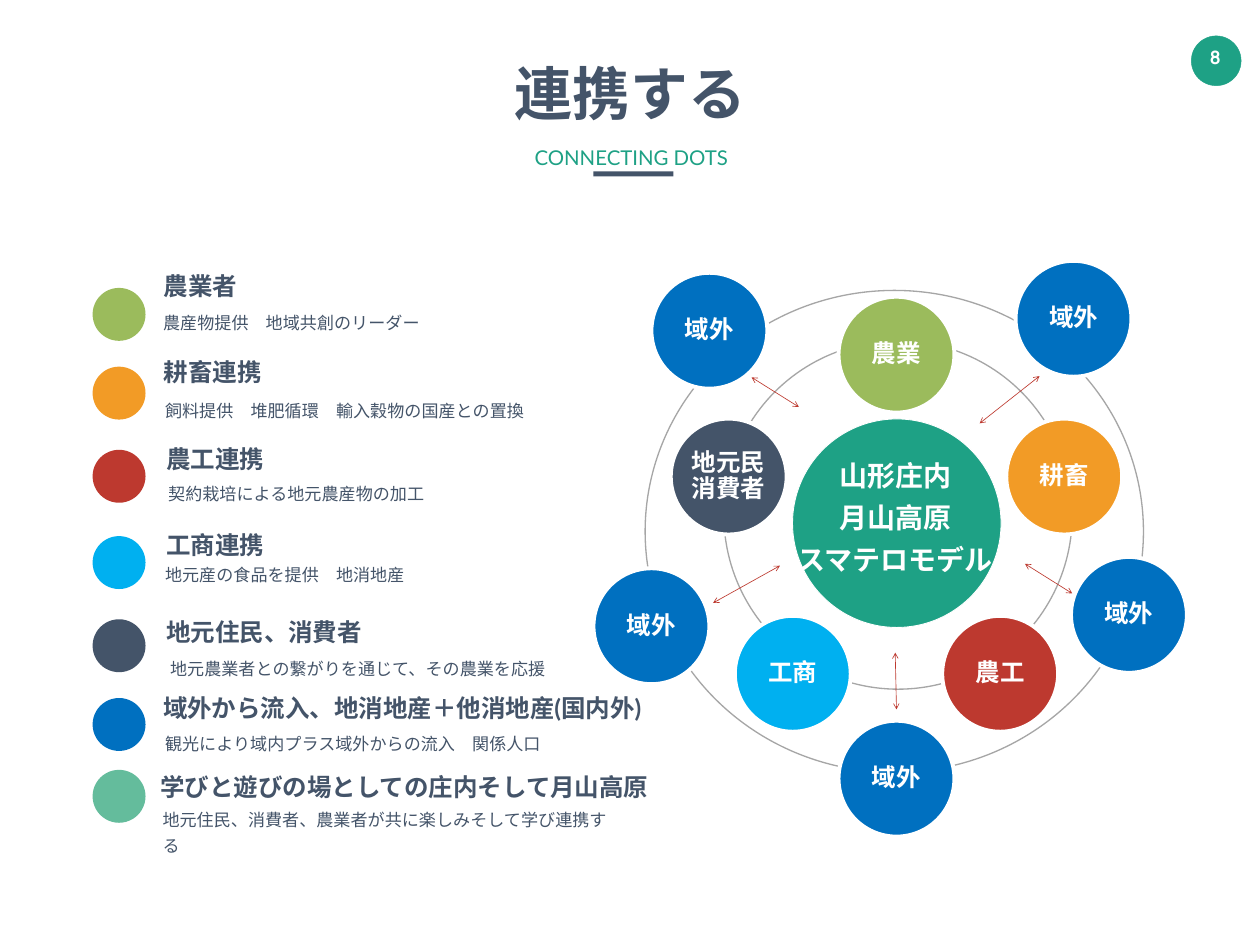
from math import cos, radians, sin

from lxml import etree
from pptx import Presentation
from pptx.dml.color import RGBColor
from pptx.enum.shapes import MSO_CONNECTOR, MSO_SHAPE
from pptx.enum.text import MSO_ANCHOR, PP_ALIGN
from pptx.oxml.ns import qn
from pptx.util import Inches, Pt

OVAL, RECT = MSO_SHAPE.OVAL, MSO_SHAPE.RECTANGLE
STRAIGHT = MSO_CONNECTOR.STRAIGHT
TOP, MIDDLE = MSO_ANCHOR.TOP, MSO_ANCHOR.MIDDLE
LEFT, CENTER = PP_ALIGN.LEFT, PP_ALIGN.CENTER

COLORS = {
    "teal": "1EA185", "mint": "64BC9C", "slate": "445469", "green": "9BBB5C",
    "orange": "F29B26", "red": "BD392F", "sky": "00B0F0", "blue": "0070C0",
    "grey": "A6A6A6", "white": "FFFFFF",
}
RGB = {name: RGBColor.from_string(value) for name, value in COLORS.items()}

# The slide is a grid of 20 columns by 15 rows, one inch each.
COLS, ROWS = 20, 15
prs = Presentation()
prs.slide_width, prs.slide_height = Inches(COLS), Inches(ROWS)
slide = prs.slides.add_slide(prs.slide_layouts[6])


def add_shape(kind, box, fill=None, line=None, width=1):
    s = slide.shapes.add_shape(kind, *map(Inches, box))
    s.shadow.inherit = False
    if fill:
        s.fill.solid()
        s.fill.fore_color.rgb = RGB[fill]
    else:
        s.fill.background()
    if line:
        s.line.color.rgb = RGB[line]
        s.line.width = Pt(width)
    else:
        s.line.fill.background()
    return s


def write(s, text, size, color, bold=True, align=LEFT, anchor=TOP, wrap=True,
          margins=(0.1, 0.05), spacing=None, after=0, font="Lato"):
    """Fill a shape with text; margins are (side, top and bottom) in inches."""
    tf = s.text_frame
    tf.word_wrap, tf.vertical_anchor = wrap, anchor
    tf.margin_left = tf.margin_right = Inches(margins[0])
    tf.margin_top = tf.margin_bottom = Inches(margins[1])
    tf.text = text
    for p in tf.paragraphs:
        p.alignment = align
        p.line_spacing = spacing
        p.space_after = Pt(after)
        for r in p.runs:
            r.font.name, r.font.size, r.font.bold = font, Pt(size), bold
            r.font.color.rgb = RGB[color]


# Page number and heading
add_shape(OVAL, (18.91, 0.57, 0.79, 0.79), "teal", "teal", 0.5)
number = slide.shapes.add_textbox(*map(Inches, (18.96, 0.66, 0.66, 0.51)))
write(number, "8", 21, "white", align=CENTER, wrap=False,
      margins=(0.15, 0.07), font="Manrope")
title = slide.shapes.add_textbox(*map(Inches, (8.07, 0.88, 3.87, 1.19)))
write(title, "連携する", 66, "slate", align=CENTER, wrap=False,
      margins=(0.08, 0.04))
add_shape(RECT, (9.42, 2.72, 1.27, 0.08), "slate")
subtitle = slide.shapes.add_textbox(*map(Inches, (8.29, 2.14, 3.46, 0.6)))
write(subtitle, "CONNECTING DOTS", 23.3, "teal", bold=False, align=CENTER,
      wrap=False, margins=(0.18, 0.09), spacing=1.2)

# Legend: dot colour and top, heading and its corner, detail and its corner
LEGEND = [
    ("green", 4.57, "農業者", 2.5, 4.25,
     "農産物提供　地域共創のリーダー", 2.41, 4.78),
    ("orange", 5.82, "耕畜連携", 2.5, 5.62,
     "飼料提供　堆肥循環　輸入穀物の国産との置換", 2.44, 6.17),
    ("red", 7.14, "農工連携", 2.54, 6.99,
     "契約栽培による地元農産物の加工", 2.49, 7.48),
    ("sky", 8.51, "工商連携", 2.54, 8.36,
     "地元産の食品を提供　地消地産", 2.44, 8.78),
    ("slate", 9.83, "地元住民、消費者", 2.54, 9.74,
     "地元農業者との繋がりを通じて、その農業を応援", 2.52, 10.27),
    ("blue", 11.08, "域外から流入、地消地産＋他消地産(国内外)", 2.49, 10.95,
     "観光により域内プラス域外からの流入　関係人口", 2.44, 11.45),
    ("mint", 12.22, "学びと遊びの場としての庄内そして月山高原", 2.45, 12.2,
     "地元住民、消費者、農業者が共に楽しみそして学び連携する", 2.4, 12.66),
]
for color, dot_y, heading, head_x, head_y, detail, detail_x, detail_y in LEGEND:
    add_shape(OVAL, (1.47, dot_y, 0.84, 0.84), color)
    head_box = slide.shapes.add_textbox(
        *map(Inches, (head_x, head_y, 8.3, 0.57)))
    write(head_box, heading, 28, "slate", anchor=MIDDLE)
    detail_box = slide.shapes.add_textbox(
        *map(Inches, (detail_x, detail_y, 7.6, 0.55)))
    write(detail_box, detail, 19.5, "slate", bold=False,
          margins=(0.18, 0.09), spacing=Pt(30.3))

# Rings and hub
add_shape(OVAL, (10.24, 4.61, 7.91, 7.65), line="grey", width=1.5)
add_shape(OVAL, (11.49, 5.41, 5.53, 5.53), line="grey", width=1.5)
add_shape(OVAL, (12.58, 6.65, 3.31, 3.31), "teal", "white")
hub_text = slide.shapes.add_textbox(*map(Inches, (12.48, 7.02, 3.46, 2.45)))
write(hub_text, "山形庄内\n月山高原\nスマテロモデル", 32, "white", align=CENTER,
      wrap=False, margins=(0.15, 0.45), spacing=Pt(24.2), after=24.2)

# Partners stand on a regular pentagon, outside regions on the outer ring
CENTER_X, CENTER_Y, ORBIT, NODE = 14.23, 8.43, 2.8, 1.84
PARTNERS = [("農業", "green"), ("耕畜", "orange"), ("農工", "red"),
            ("工商", "sky"), ("地元民\v消費者", "slate")]
OUTSIDE = [(17.04, 5.06), (11.26, 5.25), (10.34, 9.94), (14.23, 12.36),
           (17.92, 9.76)]
nodes = []
for i, (label, color) in enumerate(PARTNERS):
    angle = radians(360 / len(PARTNERS) * i)
    nodes.append((label, color, CENTER_X + ORBIT * sin(angle),
                  CENTER_Y - ORBIT * cos(angle)))
nodes += [("域外", "blue", x, y) for x, y in OUTSIDE]
for label, color, x, y in nodes:
    node = add_shape(OVAL, (x - NODE / 2, y - NODE / 2, NODE, NODE),
                     color, "white", 4.5)
    write(node, label, 28, "white", align=CENTER, anchor=MIDDLE,
          margins=(0, 0), spacing=0.9)

# Two-way arrows between the partners and the outside regions
ARROWS = [
    (11.93, 5.99, 12.68, 6.46),
    (11.32, 9.57, 12.38, 8.98),
    (14.21, 10.36, 14.23, 11.26),
    (16.27, 8.95, 17.02, 9.42),
    (15.55, 6.72, 16.5, 5.97),
]
for ends in ARROWS:
    arrow = slide.shapes.add_connector(STRAIGHT, *map(Inches, ends))
    arrow.line.color.rgb = RGB["red"]
    arrow.line.width = Pt(0.75)
    ln = arrow.line._get_or_add_ln()
    for tag in ("a:headEnd", "a:tailEnd"):
        etree.SubElement(ln, qn(tag), type="arrow")
    etree.SubElement(arrow._element.spPr, qn("a:effectLst"))

prs.save("out.pptx")
